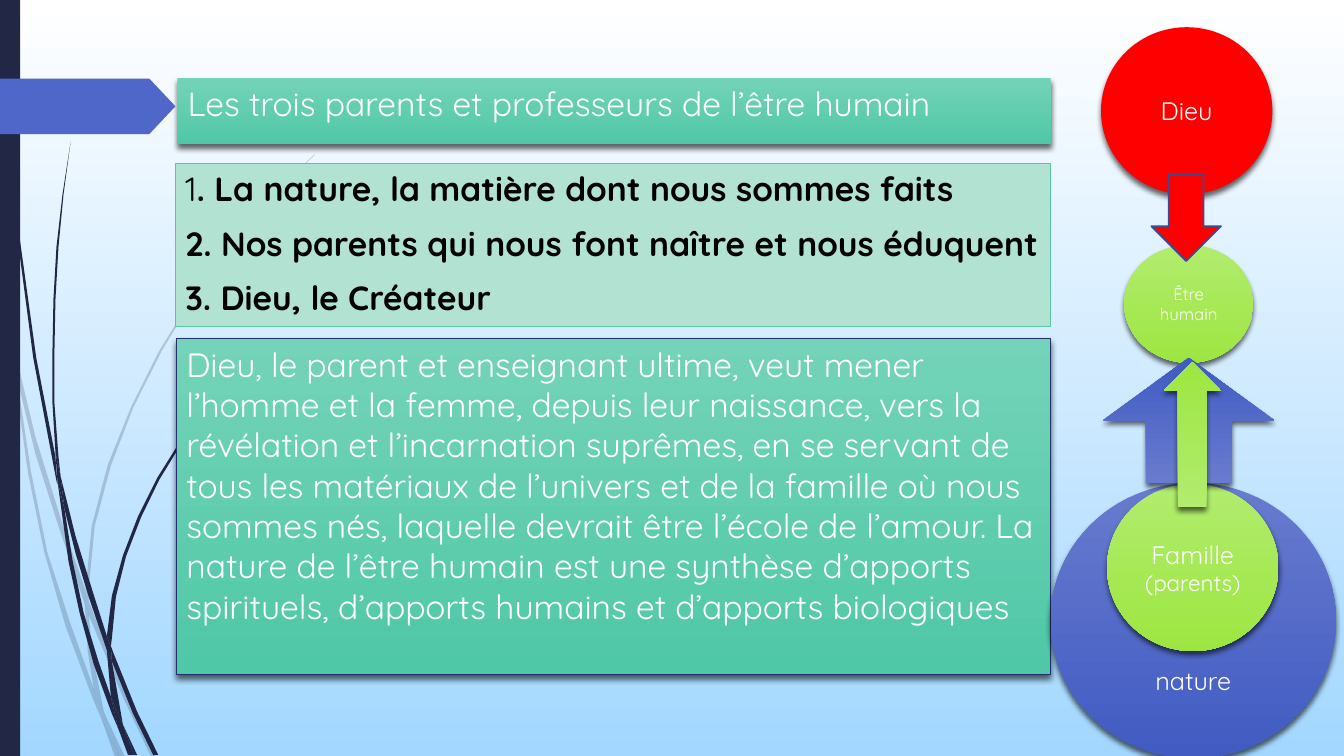
from pptx import Presentation
from pptx.dml.color import RGBColor
from pptx.enum.shapes import MSO_SHAPE
from pptx.enum.text import MSO_ANCHOR, MSO_AUTO_SIZE, PP_ALIGN
from pptx.oxml import parse_xml
from pptx.oxml.ns import nsdecls, qn

from pptx.util import Pt

PX = 9144  # 100 px to the inch
FONT = "Quicksand"
COLORS = {
    "white": "FFFFFF", "black": "000000", "sky": "A3D7FF", "navy": "212745",
    "blue": "4E67C8", "red": "FF0000", "mint": "B1E2D2", "mint_edge": "59C5A7",
    "panel_edge": "21306A", "arrow_edge": "3A4C94",
    "teal_top": "74D3B8", "teal_bottom": "4FC8A7",
    "indigo_top": "687BCE", "indigo_bottom": "415BC2",
    "lime_top": "B2EC6E", "lime_bottom": "9DE641",
}
TEAL = ("teal_top", "teal_bottom")
INDIGO = ("indigo_top", "indigo_bottom")
LIME = ("lime_top", "lime_bottom")

# Outlines of the grass blades, piece by piece.
PALE_GRASS = [
    [(11, 350), (9, 322), (0, 282), (0, 299), (10, 344)],
    [(58, 522), (84, 599), (85, 586), (62, 520), (35, 433), (14, 345), (17, 376), (35, 450)],
    [(92, 607), (88, 596), (88, 610), (123, 694), (150, 751), (155, 751), (127, 692)],
    [(119, 751), (124, 751), (105, 711)],
    [(93, 683), (70, 619), (47, 548), (31, 469), (17, 376), (11, 350), (28, 470), (44, 548),
     (65, 621), (92, 693), (101, 714), (99, 707)],
    [(84, 599), (87, 646), (93, 683), (96, 692), (105, 711), (103, 706), (91, 646), (88, 608)],
    [(88, 584), (94, 522), (110, 462), (132, 405), (160, 349), (192, 296), (229, 245),
     (268, 198), (290, 175), (312, 154), (312, 153), (289, 175), (268, 197), (228, 244),
     (191, 295), (158, 348), (130, 404), (107, 461), (91, 522), (85, 584), (88, 596)],
    [(101, 714), (114, 751), (119, 751)],
    [(88, 608), (88, 596), (85, 586), (84, 599)],
    [(96, 692), (93, 683), (101, 714), (119, 751), (105, 711)],
]
DARK_GRASS = [
    [(7, 110), (17, 233), (33, 355), (56, 477), (57, 481), (55, 453), (36, 355), (19, 232),
     (8, 109), (5, 48), (4, 0), (3, 0), (4, 48)],
    [(88, 592), (106, 645), (106, 631), (93, 590), (75, 532), (60, 472), (64, 505), (75, 549)],
    [(113, 649), (110, 641), (111, 656), (132, 708), (152, 749), (157, 749), (136, 706)],
    [(110, 691), (98, 657), (83, 608), (72, 556), (64, 505), (57, 477), (68, 557), (79, 608),
     (93, 659), (111, 708), (117, 722), (116, 717)],
    [(60, 472), (58, 453), (54, 400), (54, 349), (55, 297), (58, 245), (63, 193), (70, 141),
     (62, 193), (56, 245), (53, 297), (52, 349), (52, 400), (55, 449)],
    [(133, 749), (136, 749), (122, 719)],
    [(57, 477), (64, 505), (60, 472), (55, 449)],
    [(111, 633), (115, 592), (125, 552), (140, 513), (158, 476), (180, 440), (205, 406),
     (231, 374), (261, 344), (260, 344), (231, 373), (204, 405), (178, 439), (156, 474),
     (137, 512), (122, 551), (111, 591), (106, 631), (110, 641)],
    [(117, 722), (127, 749), (131, 749)],
    [(106, 645), (110, 691), (116, 706), (122, 719), (111, 656)],
    [(106, 645), (111, 656), (110, 641), (106, 631)],
    [(116, 706), (110, 691), (117, 722), (130, 749), (133, 749), (122, 719)],
]


def rgb(name):
    return RGBColor.from_string(COLORS[name])


def paint(fill, colors):
    """Fill with one colour name, or with a pair from top to bottom."""
    if isinstance(colors, str):
        fill.solid()
        fill.fore_color.rgb = rgb(colors)
        return
    fill.gradient()
    fill.gradient_angle = 270
    for stop, name in zip(fill.gradient_stops, colors):
        stop.color.rgb = rgb(name)


def style(shape, colors, edge=None, edge_width=0.75, shadow=False):
    paint(shape.fill, colors)
    if edge:
        shape.line.color.rgb = rgb(edge)
        shape.line.width = Pt(edge_width)
    else:
        shape.line.fill.background()
    shape.shadow.inherit = False
    if shadow:
        shape._element.spPr.find(qn("a:effectLst")).append(parse_xml(
            f'<a:outerShdw {nsdecls("a")} blurRad="50800" dist="38100" dir="5400000" '
            'rotWithShape="0"><a:srgbClr val="000000"><a:alpha val="60000"/>'
            '</a:srgbClr></a:outerShdw>'))


def within(box, left, top, width, height):
    return [(box[0] + left) * PX, (box[1] + top) * PX, width * PX, height * PX]


def add_part(page, kind, box, place, colors, **look):
    shape = page.shapes.add_shape(kind, *within(box, *place))
    style(shape, colors, **look)
    return shape


def write(shape, lines, sizes, color="white", align=PP_ALIGN.LEFT, anchor=MSO_ANCHOR.TOP):
    frame = shape.text_frame
    frame.word_wrap = True
    frame.auto_size = MSO_AUTO_SIZE.NONE
    frame.vertical_anchor = anchor
    frame.text = "\n".join(lines)
    for para, size in zip(frame.paragraphs, sizes):
        para.alignment = align
        para.font.name = FONT
        para.font.size = Pt(size)
        para.font.color.rgb = rgb(color)
    return frame


def add_blade(page, box, outline, alpha=None):
    start, *others = [(box[0] + x, box[1] + y) for x, y in outline]
    builder = page.shapes.build_freeform(*start, scale=PX)
    builder.add_line_segments(others, close=True)
    blade = builder.convert_to_shape()
    style(blade, "navy")
    if alpha:
        color = blade._element.spPr.find(qn("a:solidFill"))[0]
        color.append(parse_xml(f'<a:alpha {nsdecls("a")} val="{alpha * 1000}"/>'))


def add_backdrop(page, box):
    paint(page.background.fill, ("white", "sky"))
    for outline in PALE_GRASS:
        add_blade(page, box, outline, alpha=20)
    for outline in DARK_GRASS:
        add_blade(page, box, outline)
    add_part(page, MSO_SHAPE.RECTANGLE, box, (0, 0, 20, 750), "navy")
    marker = add_part(page, MSO_SHAPE.PENTAGON, box, (0, 78, 174, 55), "blue")
    marker.adjustments[0] = 0.47


def add_lesson(page, box):
    title = page.shapes.title
    title.left, title.top, title.width, title.height = within(box, 2, 0, 866, 66)
    style(title, TEAL, shadow=True)
    write(title, ["Les trois parents et professeurs de l’être humain"], [24])

    parents = add_part(page, MSO_SHAPE.RECTANGLE, box, (0, 85, 868, 162), "mint", edge="mint_edge")
    frame = write(parents, ["1", "2. Nos parents qui nous font naître et nous éduquent",
                            "3. Dieu, le Créateur"], [24] * 3, color="black")
    first, *others = frame.paragraphs
    span = first.add_run()
    span.text = ". La nature, la matière dont nous sommes faits"
    span.font.bold = True
    for para in others:
        para.font.bold = True
    for para in frame.paragraphs:
        para.space_before = Pt(10)

    panel = add_part(page, MSO_SHAPE.RECTANGLE, box, (1, 259, 867, 333), TEAL,
                     edge="panel_edge", shadow=True)
    write(panel, [
        "Dieu, le parent et enseignant ultime, veut mener l’homme et la femme, depuis leur "
        "naissance, vers la révélation et l’incarnation suprêmes, en se servant de tous les "
        "matériaux de l’univers et de la famille où nous sommes nés, laquelle devrait être "
        "l’école de l’amour. La nature de l’être humain est une synthèse d’apports spirituels, "
        "d’apports humains et d’apports biologiques"], [24])


def add_diagram(page, box):
    circles = [
        ((50, 0, 170, 166), "red", ["Dieu"], [18], 5),
        ((0, 452, 283, 273), INDIGO, ["nature"], [18], 124),
        ((56, 453, 170, 166), LIME, ["Famille", "(parents)"], [18, 16], 5),
        ((73, 216, 128, 117), LIME, ["Être humain"], [12], 5),
    ]
    for place, colors, lines, sizes, inset in circles:
        circle = add_part(page, MSO_SHAPE.OVAL, box, place, colors, shadow=True)
        frame = write(circle, lines, sizes, align=PP_ALIGN.CENTER, anchor=MSO_ANCHOR.MIDDLE)
        frame.margin_top = inset * PX

    add_part(page, MSO_SHAPE.DOWN_ARROW, box, (100, 146, 69, 86), "red",
             edge="arrow_edge", edge_width=1.25)
    for place, colors in [((52, 328, 170, 124), INDIGO), ((112, 332, 57, 144), LIME)]:
        arrow = add_part(page, MSO_SHAPE.DOWN_ARROW, box, place, colors, shadow=True)
        arrow.rotation = 180


def main():
    deck = Presentation()
    deck.slide_width, deck.slide_height = 1333 * PX, 750 * PX
    page = deck.slides.add_slide(deck.slide_layouts[5])
    add_backdrop(page, (0, 0, 1333, 750))
    add_lesson(page, (174, 77, 868, 592))
    add_diagram(page, (1042, 27, 283, 725))
    deck.save("out.pptx")


if __name__ == "__main__":
    main()
